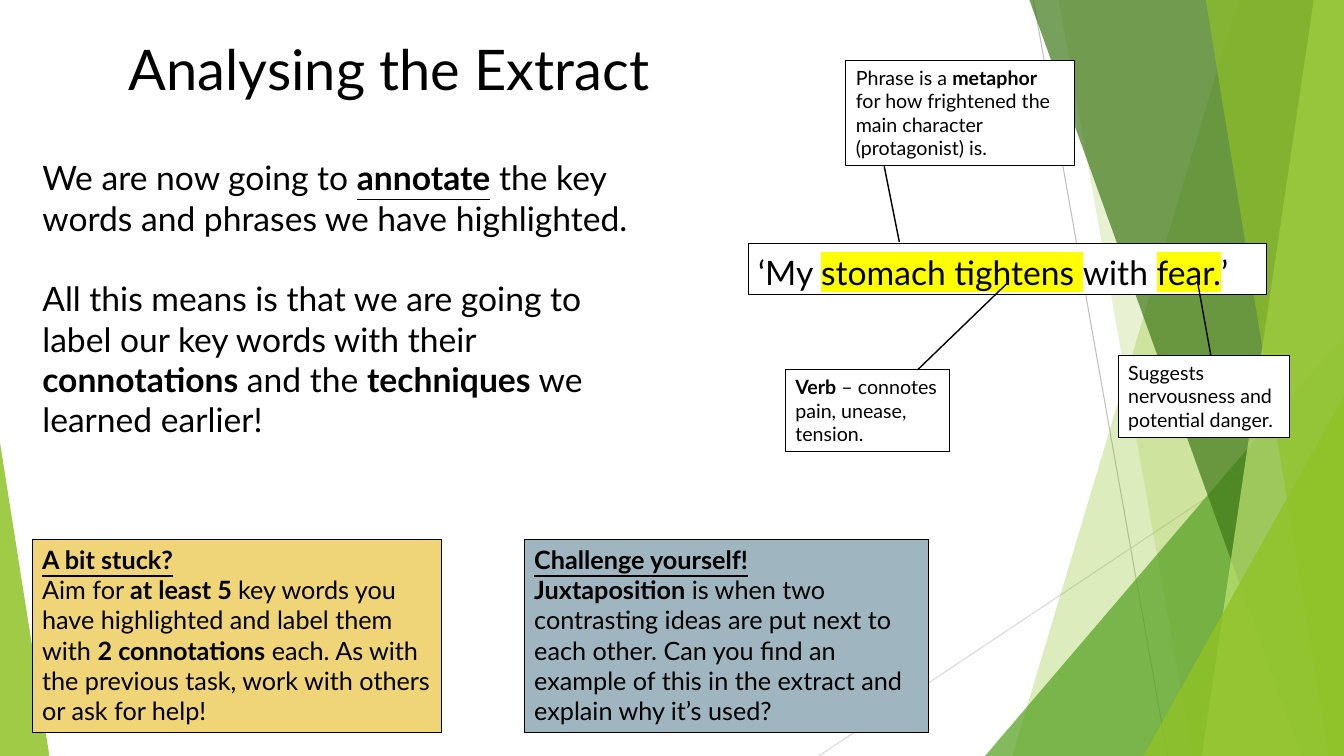
from lxml.etree import SubElement
from pptx import Presentation
from pptx.dml.color import RGBColor
from pptx.enum.shapes import MSO_CONNECTOR as Connector, MSO_SHAPE as Shape
from pptx.enum.text import MSO_ANCHOR as Anchor, MSO_AUTO_SIZE as AutoSize, PP_ALIGN as Align
from pptx.oxml.ns import qn
from pptx.util import Inches, Pt

WIDTH, HEIGHT = 13.33, 7.5
FONT = "Lato"
BLACK = RGBColor(0x00, 0x00, 0x00)
WHITE = RGBColor(0xFF, 0xFF, 0xFF)
GOLD = RGBColor(0xF0, 0xD5, 0x78)
SLATE = RGBColor(0x9F, 0xB6, 0xC0)
YELLOW = RGBColor(0xFF, 0xFF, 0x00)
GREEN = RGBColor(0x90, 0xC2, 0x26)
MID_GREEN = RGBColor(0x54, 0xA0, 0x21)
DARK_GREEN = RGBColor(0x3F, 0x78, 0x19)
PALE_GREEN = RGBColor(0xC0, 0xE4, 0x74)
GREY = RGBColor(0xBF, 0xBF, 0xBF)
LIGHT_GREY = RGBColor(0xD9, 0xD9, 0xD9)


def paint(shape, color, opacity):
    """Give a borderless shape a see-through fill; opacity is in percent."""
    shape.shadow.inherit = False
    shape.line.fill.background()
    shape.fill.solid()
    shape.fill.fore_color.rgb = color
    tint = shape.fill._xPr.find(qn("a:solidFill"))[0]
    SubElement(tint, qn("a:alpha"), val=str(opacity * 1000))


def add_band(page, top_x, bottom_x, color, opacity):
    """Fill from a slanted left edge to the right side of the slide."""
    builder = page.shapes.build_freeform(Inches(top_x), 0)
    corners = [(WIDTH, 0), (WIDTH, HEIGHT), (bottom_x, HEIGHT)]
    builder.add_line_segments([(Inches(x), Inches(y)) for x, y in corners])
    paint(builder.convert_to_shape(), color, opacity)


def add_corner(page, left, width, height, apex, color, opacity):
    """Add a right triangle that stands on the bottom of the slide."""
    triangle = page.shapes.add_shape(Shape.ISOSCELES_TRIANGLE, Inches(left),
                                     Inches(HEIGHT - height), Inches(width), Inches(height))
    triangle.adjustments[0] = apex
    paint(triangle, color, opacity)


def add_line(page, start, end, color=BLACK, weight=1):
    line = page.shapes.add_connector(Connector.STRAIGHT, *map(Inches, start + end))
    line.line.color.rgb = color
    line.line.width = Pt(weight)
    SubElement(line._element.spPr, qn("a:effectLst"))


def add_span(para, text, size, style=""):
    """Style letters: b is bold, u is underlined, h is highlighted."""
    span = para.add_run()
    span.text = text
    font = span.font
    font.size = Pt(size)
    font.bold = "b" in style
    font.underline = "u" in style
    font.color.rgb = BLACK
    if "h" in style:
        properties = span._r.get_or_add_rPr()
        highlight = SubElement(properties, qn("a:highlight"))
        SubElement(highlight, qn("a:srgbClr"), val=str(YELLOW))
    font.name = FONT


def write(box, paragraphs, size, align=Align.LEFT, gap=0):
    """Fill a box with paragraphs, each a list of (text, style) spans."""
    frame = box.text_frame
    frame.word_wrap = True
    frame.auto_size = AutoSize.NONE
    frame.vertical_anchor = Anchor.TOP
    for index, spans in enumerate(paragraphs):
        para = frame.add_paragraph() if index else frame.paragraphs[0]
        if box.is_placeholder:
            properties = para._p.get_or_add_pPr()
            properties.set("marL", "0")
            properties.set("indent", "0")
            SubElement(properties, qn("a:buNone"))
        para.alignment = align
        para.space_before = Pt(gap if index else 0)
        for text, style in spans:
            add_span(para, text, size, style)


def place(shape, left, top, width, height):
    shape.left, shape.top = Inches(left), Inches(top)
    shape.width, shape.height = Inches(width), Inches(height)


def add_box(page, bounds, color, size, paragraphs):
    box = page.shapes.add_shape(Shape.RECTANGLE, *map(Inches, bounds))
    box.shadow.inherit = False
    box.fill.solid()
    box.fill.fore_color.rgb = color
    box.line.color.rgb = BLACK
    box.line.width = Pt(0.75)
    write(box, paragraphs, size)
    return box


def add_backdrop(page):
    add_line(page, (10.25, 0), (11.58, HEIGHT), GREY, 0.75)
    add_line(page, (WIDTH, 4.03), (8.12, HEIGHT), LIGHT_GREY, 0.75)
    add_band(page, 12.28, 10.04, GREEN, 30)
    add_band(page, 10.5, 11.83, GREEN, 20)
    add_corner(page, 9.77, 3.56, 4.17, 1, MID_GREEN, 72)
    add_band(page, 10.21, 12.91, DARK_GREEN, 70)
    add_band(page, 13.03, 11.92, PALE_GREEN, 70)
    add_band(page, 11.96, 13.18, GREEN, 65)
    add_corner(page, 11.34, 1.99, 3.57, 1, GREEN, 80)
    add_corner(page, 0, 0.49, 3.11, 0, GREEN, 85)


def add_task(page):
    title, body = page.placeholders
    place(title, 1.09, 0.29, 5.54, 0.77)
    write(title, [[("Analysing the Extract", "")]], 40, Align.CENTER)
    place(body, 0.32, 1.51, 6.01, 3.33)
    write(body, [
        [("We are now going to ", ""), ("annotate", "bu"),
         (" the key words and phrases we have highlighted.", "")],
        [("All this means is that we are going to label our key words with their ", ""),
         ("connotations", "b"), (" and the ", ""), ("techniques", "b"),
         (" we learned earlier!", "")],
    ], 24, gap=28.8)


def add_help(page):
    add_box(page, (0.32, 5.35, 4.06, 1.92), GOLD, 18, [
        [("A bit stuck?", "bu")],
        [("Aim for ", ""), ("at least 5 ", "b"),
         ("key words you have highlighted and label them with ", ""), ("2 connotations", "b"),
         (" each. As with the previous task, work with others or ask for help!", "")],
    ])
    add_box(page, (5.2, 5.35, 4.01, 1.92), SLATE, 18, [
        [("Challenge yourself!", "bu")],
        [("Juxtaposition", "b"),
         (" is when two contrasting ideas are put next to each other. Can you find an "
          "example of this in the extract and explain why it’s used?", "")],
    ])


def add_annotated_quote(page):
    quote = add_box(page, (7.42, 2.42, 5.14, 0.5), WHITE, 24, [
        [("‘My ", ""), ("stomach tightens ", "h"), ("with ", ""), ("fear.", "h"), ("’", "")]])
    quote.text_frame.paragraphs[0].line_spacing = 1.07
    add_box(page, (8.39, 0.6, 2.27, 1.04), WHITE, 14, [
        [("Phrase is a ", ""), ("metaphor", "b"),
         (" for how frightened the main character (protagonist) is.", "")]])
    add_box(page, (7.79, 3.67, 1.63, 0.81), WHITE, 14, [
        [("Verb", "b"), (" – connotes pain, unease, tension.", "")]])
    add_box(page, (11.09, 3.53, 1.7, 0.81), WHITE, 14, [
        [("Suggests nervousness and potential danger.", "")]])
    add_line(page, (9.1, 3.67), (9.99, 2.81))
    add_line(page, (8.92, 2.4), (8.77, 1.65))
    add_line(page, (12.01, 3.53), (11.88, 2.81))


def main():
    deck = Presentation()
    deck.slide_width, deck.slide_height = Inches(WIDTH), Inches(HEIGHT)
    page = deck.slides.add_slide(deck.slide_layouts[1])
    add_backdrop(page)
    add_task(page)
    add_help(page)
    add_annotated_quote(page)
    deck.save("out.pptx")


if __name__ == "__main__":
    main()
